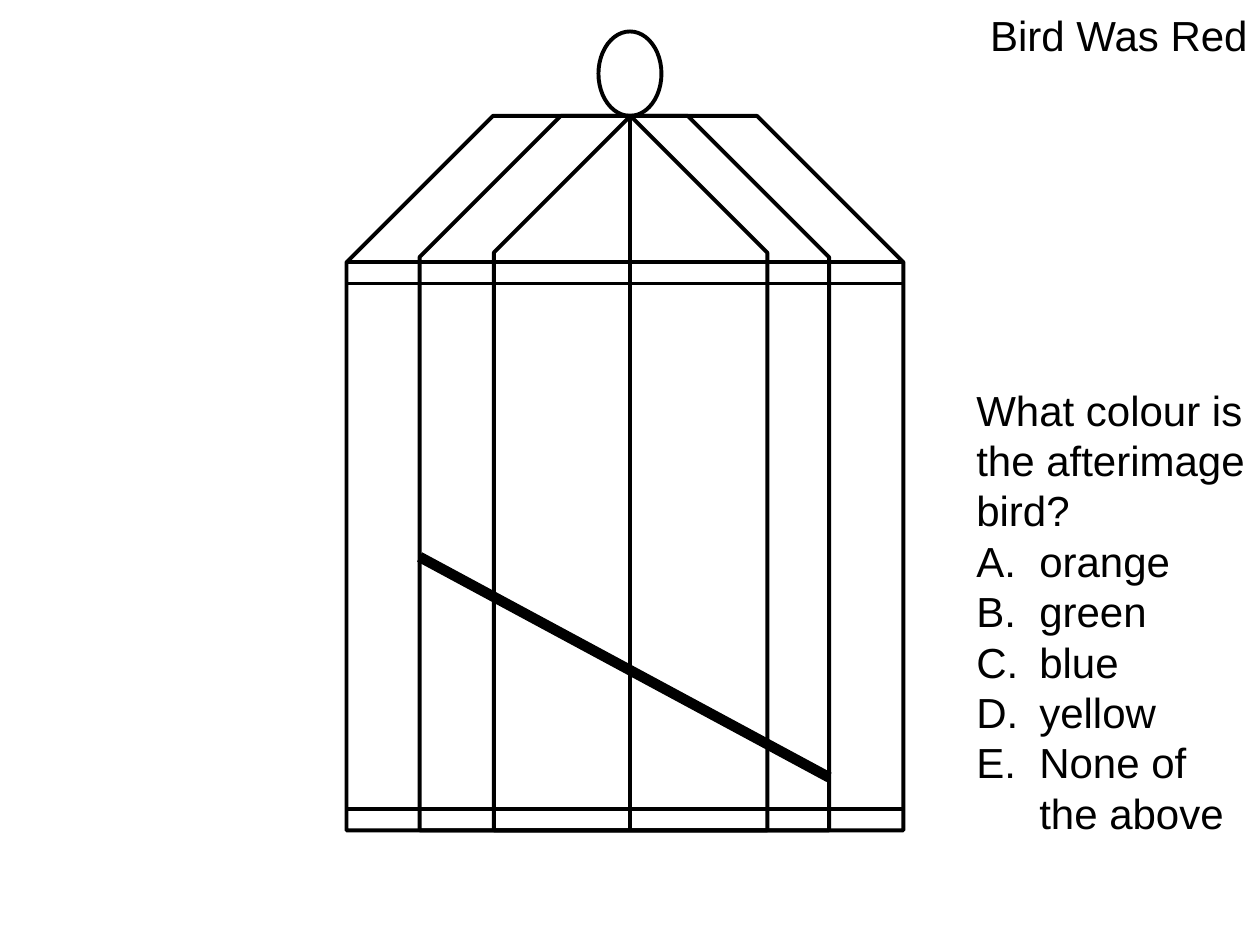
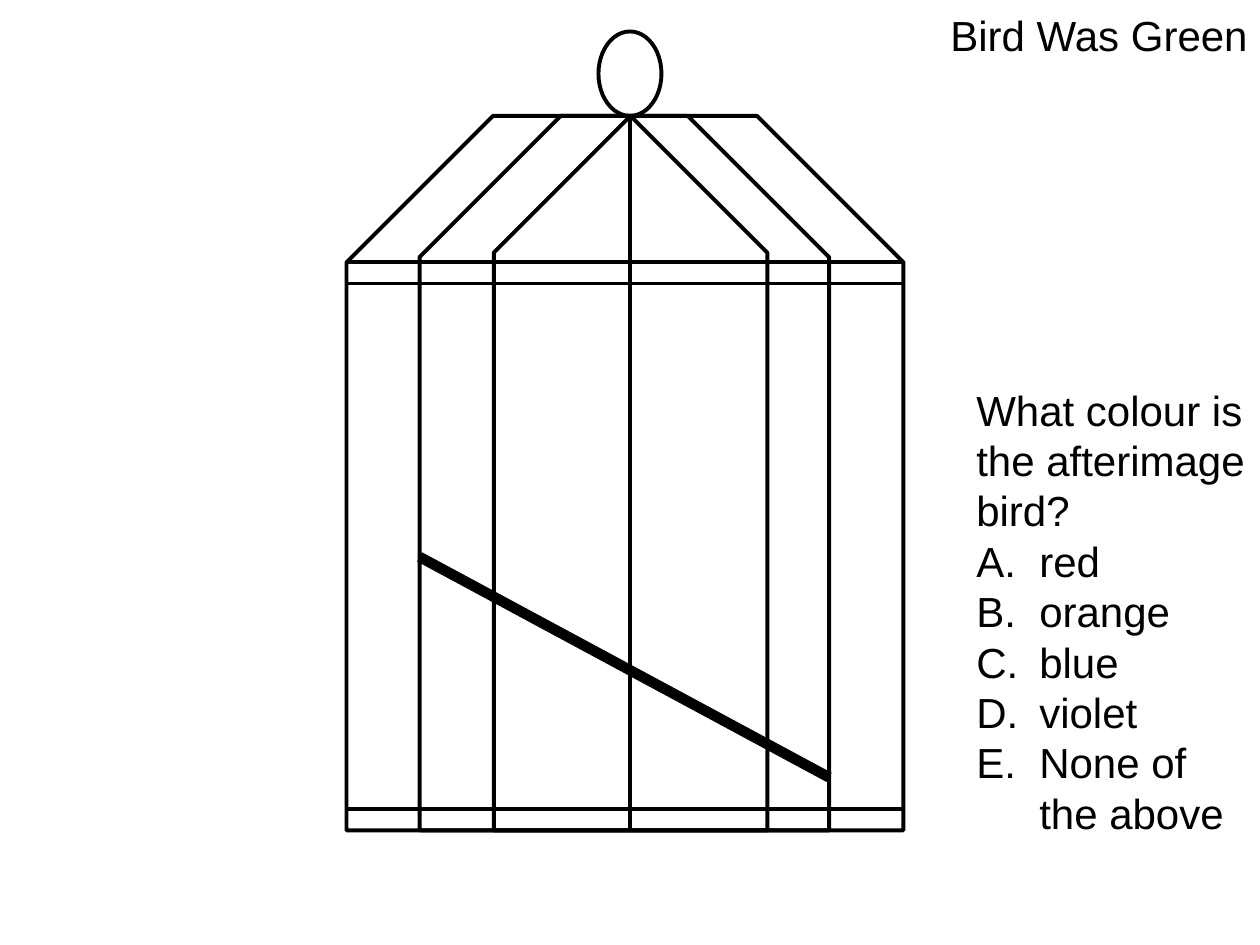
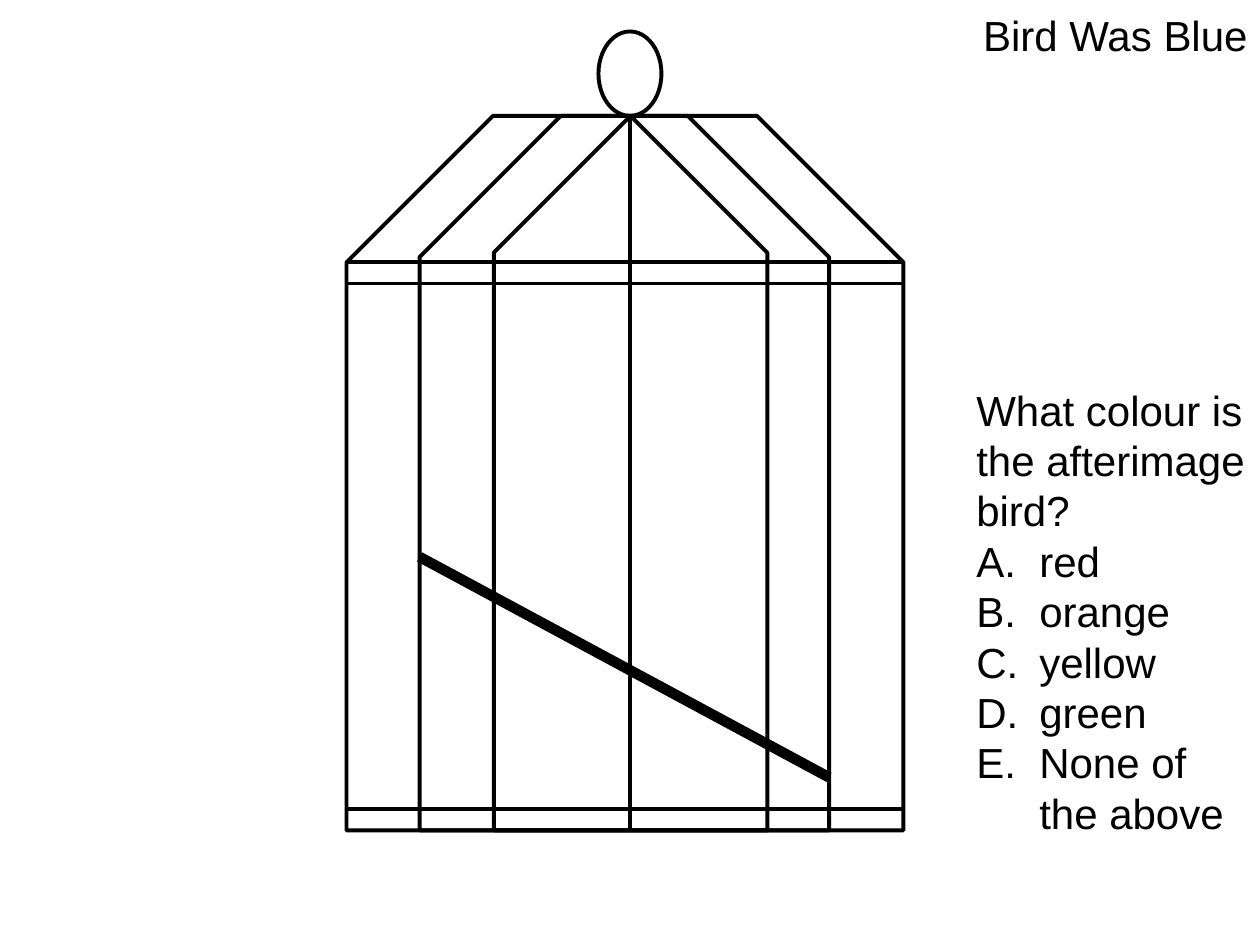
"""Build three afterimage quiz slides, each with an empty birdcage and a question."""
from dataclasses import dataclass

from lxml import etree
from pptx import Presentation
from pptx.dml.color import RGBColor
from pptx.enum import shapes, text
from pptx.oxml import ns
from pptx.util import Inches, Pt


@dataclass(frozen=True)
class Theme:
    ink: RGBColor = RGBColor(0x00, 0x00, 0x00)
    paper: RGBColor = RGBColor(0xFF, 0xFF, 0xFF)
    font: str = "Arial"
    text_size: float = 24
    thin: float = 1.5
    bar: float = 2.25
    perch: float = 6


QUESTION = "What colour is the afterimage bird?"
LAST_ANSWER = "None of the above"
QUIZZES = [
    ("Bird Was Red", ["orange", "green", "blue", "yellow"]),
    ("Bird Was Green", ["red", "orange", "blue", "violet"]),
    ("Bird Was Blue", ["red", "orange", "yellow", "green"]),
]

SLIDE_WIDTH, SLIDE_HEIGHT = 10, 7.5
CAGE_LEFT, CAGE_RIGHT = 2.75, 7.17
CAGE_TOP, CAGE_HEIGHT = 0.92, 5.67
CAGE_BOTTOM = 6.58
CAGE_CENTRE = 5
FRAMES = [(CAGE_LEFT, 4.42, 0.263), (3.33, 3.25, 0.345), (3.92, 2.17, 0.5)]


class Deck:
    def __init__(self, theme):
        self.theme = theme
        self.presentation = Presentation()
        self.presentation.slide_width = Inches(SLIDE_WIDTH)
        self.presentation.slide_height = Inches(SLIDE_HEIGHT)
        self.slide = None

    def add_slide(self):
        self.slide = self.presentation.slides.add_slide(self.presentation.slide_layouts[6])

    def draw_line_style(self, shape, weight):
        shape.line.color.rgb = self.theme.ink
        shape.line.width = Pt(weight)

    def add_outline(self, kind, left, top, width, height, fill=None):
        shape = self.slide.shapes.add_shape(
            kind, Inches(left), Inches(top), Inches(width), Inches(height))
        shape.shadow.inherit = False
        if fill is None:
            shape.fill.background()
        else:
            shape.fill.solid()
            shape.fill.fore_color.rgb = fill
        self.draw_line_style(shape, self.theme.bar)
        return shape

    def add_line(self, start, end, weight):
        line = self.slide.shapes.add_connector(
            shapes.MSO_CONNECTOR.STRAIGHT, *map(Inches, (*start, *end)))
        self.draw_line_style(line, weight)
        etree.SubElement(line._element.spPr, ns.qn("a:effectLst"))

    def add_text(self, left, top, height, lines, align=text.PP_ALIGN.LEFT):
        box = self.slide.shapes.add_textbox(
            Inches(left), Inches(top), Inches(SLIDE_WIDTH - left), Inches(height))
        frame = box.text_frame
        frame.word_wrap = True
        frame.auto_size = text.MSO_AUTO_SIZE.SHAPE_TO_FIT_TEXT
        frame.text = "\n".join(lines)
        for paragraph in frame.paragraphs:
            paragraph.alignment = align
            paragraph.font.name = self.theme.font
            paragraph.font.size = Pt(self.theme.text_size)
            paragraph.font.color.rgb = self.theme.ink
        return frame

    def add_lettering(self, paragraph):
        properties = paragraph._p.get_or_add_pPr()
        properties.set("marL", str(Inches(0.5)))
        properties.set("indent", str(Inches(-0.5)))
        letter = etree.Element(ns.qn("a:buAutoNum"), type="alphaUcPeriod")
        properties.insert(0, letter)

    def add_cage(self):
        theme = self.theme
        self.add_outline(shapes.MSO_SHAPE.OVAL, 4.75, 0.25, 0.5, 0.67, theme.paper)
        for left, width, snip in FRAMES:
            frame = self.add_outline(
                shapes.MSO_SHAPE.SNIP_2_SAME_RECTANGLE, left, CAGE_TOP, width, CAGE_HEIGHT)
            frame.adjustments[0] = snip
            frame.adjustments[1] = 0
        self.add_line((CAGE_CENTRE, CAGE_TOP), (CAGE_CENTRE, CAGE_BOTTOM), theme.bar)
        for height, weight in [(2.08, theme.bar), (2.25, theme.thin), (6.42, theme.bar)]:
            self.add_line((CAGE_LEFT, height), (CAGE_RIGHT, height), weight)
        self.add_line((3.33, 4.42), (6.58, 6.17), theme.perch)

    def add_question(self, answers):
        frame = self.add_text(7.65, 3, 3.74, [QUESTION, *answers, LAST_ANSWER])
        for paragraph in frame.paragraphs[1:]:
            self.add_lettering(paragraph)

    def add_title(self, title):
        self.add_text(CAGE_RIGHT, 0.03, 0.5, [title], text.PP_ALIGN.RIGHT)


def main():
    deck = Deck(Theme())
    for title, answers in QUIZZES:
        deck.add_slide()
        deck.add_cage()
        deck.add_question(answers)
        deck.add_title(title)
    deck.presentation.save("out.pptx")


if __name__ == "__main__":
    main()
